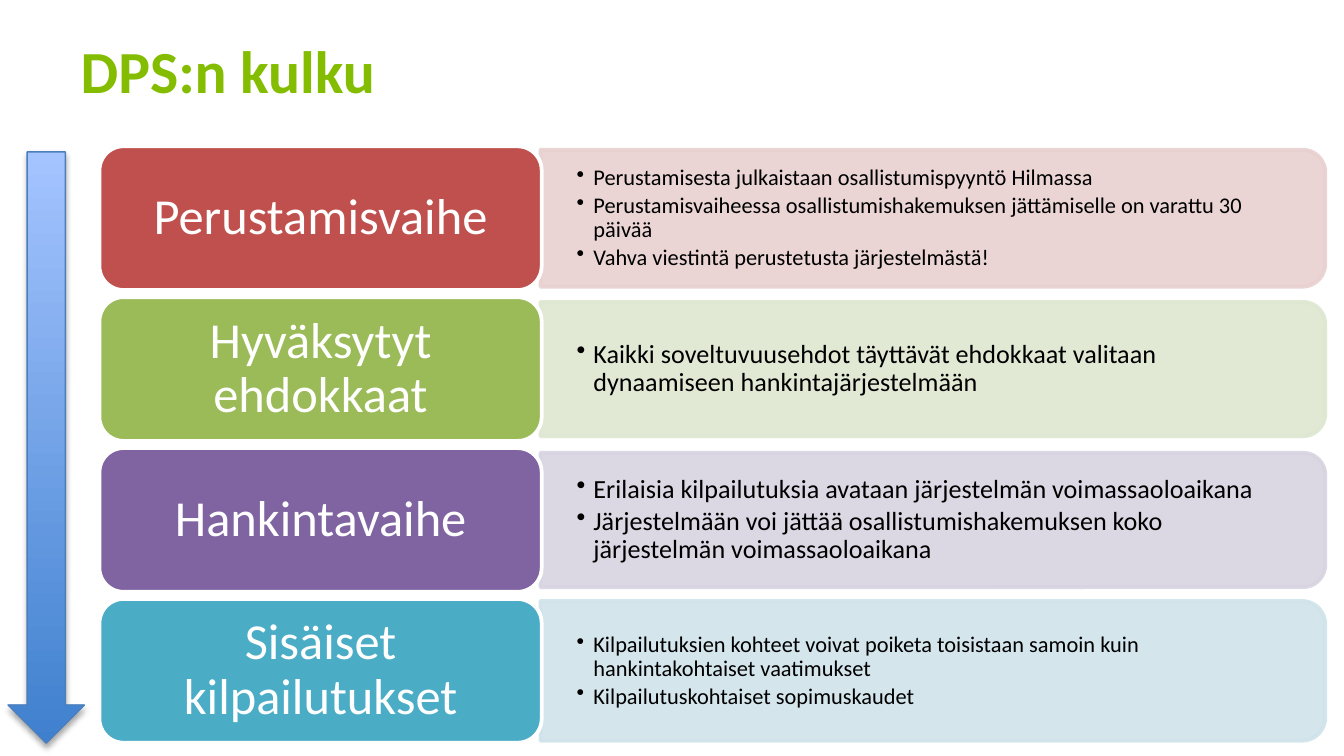
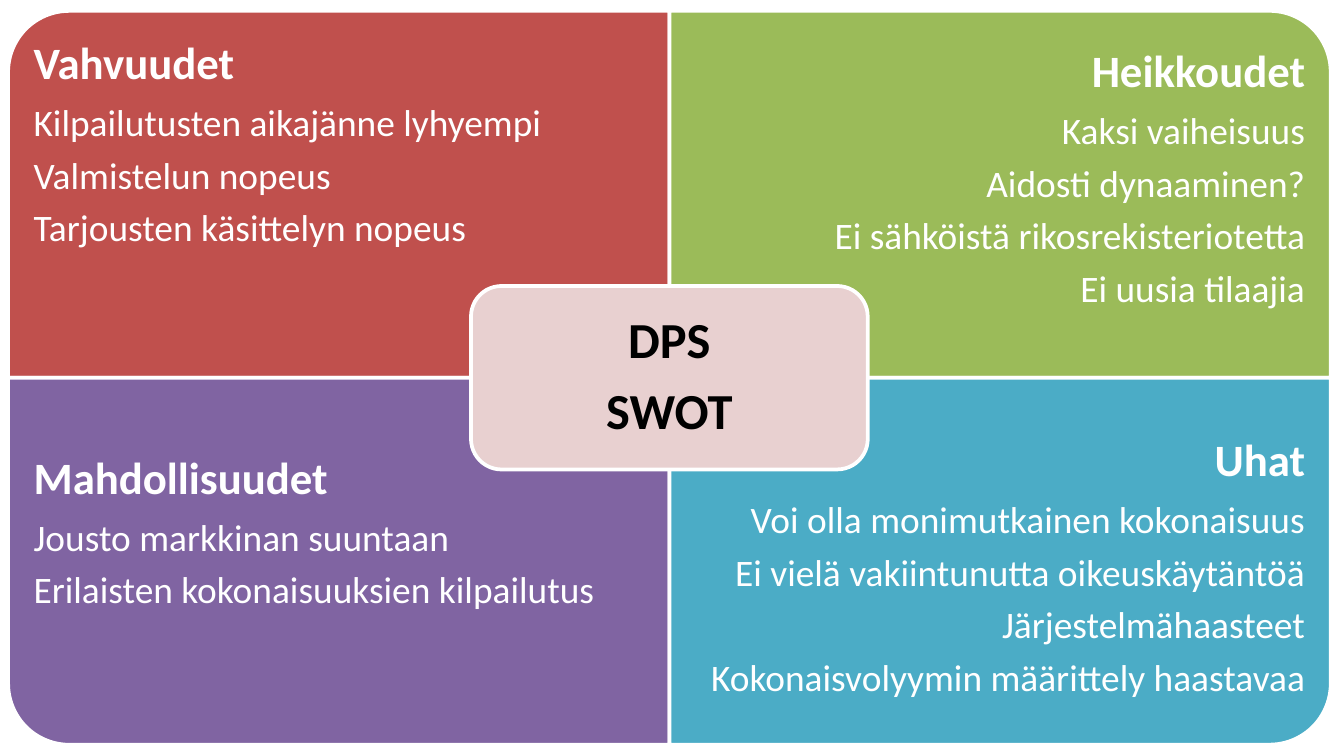
from lxml.etree import SubElement
from pptx import Presentation
from pptx.dml.color import RGBColor
from pptx.enum.shapes import MSO_SHAPE as Shape
from pptx.enum.text import MSO_ANCHOR as Anchor, PP_ALIGN as Align
from pptx.oxml.ns import qn
from pptx.util import Pt

FONT = "Calibri"
COLORS = {
    "title": "84BD00", "white": "FFFFFF", "black": "000000",
    "red": "C0504D", "green": "9BBB59", "purple": "8064A2", "teal": "4BACC6",
    "pale red": "E8D0D0", "pale green": "DEE7D1",
    "pale purple": "D8D3E0", "pale teal": "D0E3EA",
    "arrow tail": "A4C4FF", "arrow tip": "3F80CE", "arrow line": "4B7EBC",
}

TITLE = "DPS:n kulku"
PHASES = [
    ("Perustamisvaihe", "red", 12, 73.4, [
        "Perustamisesta julkaistaan osallistumispyyntö Hilmassa",
        "Perustamisvaiheessa osallistumishakemuksen jättämiselle on varattu 30 päivää",
        "Vahva viestintä perustetusta järjestelmästä!"]),
    ("Hyväksytyt ehdokkaat", "green", 14, 72, [
        "Kaikki soveltuvuusehdot täyttävät ehdokkaat valitaan dynaamiseen hankintajärjestelmään"]),
    ("Hankintavaihe", "purple", 14, 72, [
        "Erilaisia kilpailutuksia avataan järjestelmän voimassaoloaikana",
        "Järjestelmään voi jättää osallistumishakemuksen koko järjestelmän voimassaoloaikana"]),
    ("Sisäiset kilpailutukset", "teal", 12, 74.9, [
        "Kilpailutuksien kohteet voivat poiketa toisistaan samoin kuin hankintakohtaiset vaatimukset",
        "Kilpailutuskohtaiset sopimuskaudet"]),
]
QUADRANTS = [
    ("red", 270, Align.LEFT, 8.3, [
        "Vahvuudet", "Kilpailutusten aikajänne lyhyempi", "Valmistelun nopeus",
        "Tarjousten käsittelyn nopeus"]),
    ("green", 0, Align.RIGHT, 12.6, [
        "Heikkoudet", "Kaksi vaiheisuus", "Aidosti dynaaminen?",
        "Ei sähköistä rikosrekisteriotetta", "Ei uusia tilaajia"]),
    ("purple", 180, Align.LEFT, 230.6, [
        "Mahdollisuudet", "Jousto markkinan suuntaan",
        "Erilaisten kokonaisuuksien kilpailutus"]),
    ("teal", 90, Align.RIGHT, 221, [
        "Uhat", "Voi olla monimutkainen kokonaisuus",
        "Ei vielä vakiintunutta oikeuskäytäntöä", "Järjestelmähaasteet",
        "Kokonaisvolyymin määrittely haastavaa"]),
]
CENTER = ["DPS", "SWOT"]

ROW_TOP, ROW_PITCH, ROW_HEIGHT = 78.4, 80.85, 77
LABEL_LEFT, LABEL_WIDTH = 53.3, 236.9
PANEL_LEFT, PANEL_WIDTH = 289.5, 420.5
TILE_LEFT, TILE_TOP, TILE_WIDTH, TILE_HEIGHT = 4.3, 5.8, 354.3, 196.6


def color(name):
    return RGBColor.from_string(COLORS[name])


def add_block(page, kind, left, top, width, height, fill, line="white", rotation=0):
    if rotation % 180:
        left, top = left + (width - height) / 2, top + (height - width) / 2
        width, height = height, width
    block = page.shapes.add_shape(kind, Pt(left), Pt(top), Pt(width), Pt(height))
    block.rotation = rotation
    block.fill.solid()
    block.fill.fore_color.rgb = color(fill)
    block.line.color.rgb = color(line)
    block.line.width = Pt(2)
    block.shadow.inherit = False
    return block


def add_box(page, left, top, width, height):
    return page.shapes.add_textbox(Pt(left), Pt(top), Pt(width), Pt(height))


def write(box, lines, sizes, ink, align, gap, insets, anchor=Anchor.MIDDLE,
          bold=(), bullets=False):
    frame = box.text_frame
    frame.word_wrap = True
    frame.vertical_anchor = anchor
    frame.margin_left = frame.margin_right = Pt(insets[0])
    frame.margin_top = frame.margin_bottom = Pt(insets[1])
    frame.text = "\n".join(lines)
    for index, (para, size) in enumerate(zip(frame.paragraphs, sizes)):
        if bullets:
            properties = para._p.get_or_add_pPr()
            properties.set("marL", str(Pt(9)))
            properties.set("indent", str(Pt(-9)))
            SubElement(properties, qn("a:buChar")).set("char", "•")
        para.alignment = align
        para.line_spacing = 0.9
        para.space_after = Pt(round(size * gap, 1))
        for span in para.runs:
            span.font.name = FONT
            span.font.size = Pt(size)
            span.font.bold = index in bold
            span.font.color.rgb = color(ink)


def make_translucent(block):
    for tint in block._element.spPr.iter(qn("a:srgbClr")):
        SubElement(tint, qn("a:alpha")).set("val", "90000")


def add_time_arrow(page):
    arrow = add_block(page, Shape.DOWN_ARROW, 4.3, 81.4, 41, 316.8,
                      "arrow tip", "arrow line")
    arrow.line.width = Pt(0.75)
    arrow.fill.gradient()
    arrow.fill.gradient_angle = 90
    for stop, name in zip(arrow.fill.gradient_stops, ("arrow tip", "arrow tail")):
        stop.color.rgb = color(name)
    effects = arrow._element.spPr.find(qn("a:effectLst"))
    shadow = SubElement(effects, qn("a:outerShdw"), blurRad=str(Pt(3.1)),
                        dist=str(Pt(1.8)), dir="5400000", rotWithShape="0")
    tint = SubElement(shadow, qn("a:srgbClr"), val=COLORS["black"])
    SubElement(tint, qn("a:alpha"), val="35000")


def build_process(deck):
    page = deck.slides.add_slide(deck.slide_layouts[5])
    title = page.shapes.title
    title.left, title.top, title.width, title.height = Pt(36), Pt(16.6), Pt(480), Pt(46)
    write(title, [TITLE], [32], "title", Align.LEFT, 0, (7.2, 3.6), bold=(0,))
    for row, (name, hue, size, height, points) in enumerate(PHASES):
        top = ROW_TOP + row * ROW_PITCH
        panel_top = top + (ROW_HEIGHT - height) / 2
        panel = add_block(page, Shape.ROUND_2_SAME_RECTANGLE, PANEL_LEFT, panel_top,
                          PANEL_WIDTH, height, "pale " + hue, "pale " + hue, 90)
        make_translucent(panel)
        details = add_box(page, PANEL_LEFT, panel_top + 3.6, PANEL_WIDTH - 3.6, height - 7.2)
        write(details, points, [size] * len(points), "black", Align.LEFT, 0.15,
              (19.4, 10), bullets=True)
        label = add_block(page, Shape.ROUNDED_RECTANGLE, LABEL_LEFT, top,
                          LABEL_WIDTH, ROW_HEIGHT, hue)
        write(label, [name], [27], "white", Align.CENTER, 0, (11.5, 7.5))
    add_time_arrow(page)


def build_swot(deck):
    page = deck.slides.add_slide(deck.slide_layouts[6])
    for index, (hue, rotation, align, text_top, lines) in enumerate(QUADRANTS):
        row, column = divmod(index, 2)
        left = TILE_LEFT + column * TILE_WIDTH
        add_block(page, Shape.ROUND_1_RECTANGLE, left, TILE_TOP + row * TILE_HEIGHT,
                  TILE_WIDTH, TILE_HEIGHT, hue, rotation=rotation)
        box = add_box(page, left, text_top, TILE_WIDTH, TILE_HEIGHT * 0.75)
        sizes = [24] + [20] * (len(lines) - 1)
        write(box, lines, sizes, "white", align, 0.33, (13.7, 13.7), Anchor.TOP, bold=(0,))
    width, height = TILE_WIDTH * 0.6, TILE_HEIGHT * 0.5
    center = add_block(page, Shape.ROUNDED_RECTANGLE, TILE_LEFT + TILE_WIDTH - width / 2,
                       TILE_TOP + TILE_HEIGHT - height / 2, width, height, "pale red")
    write(center, CENTER, [27, 27], "black", Align.CENTER, 0.33, (12.7, 12.7), bold=(0, 1))


def main():
    deck = Presentation()
    deck.slide_width, deck.slide_height = Pt(720), Pt(405)
    build_process(deck)
    build_swot(deck)
    deck.save("out.pptx")


if __name__ == "__main__":
    main()
